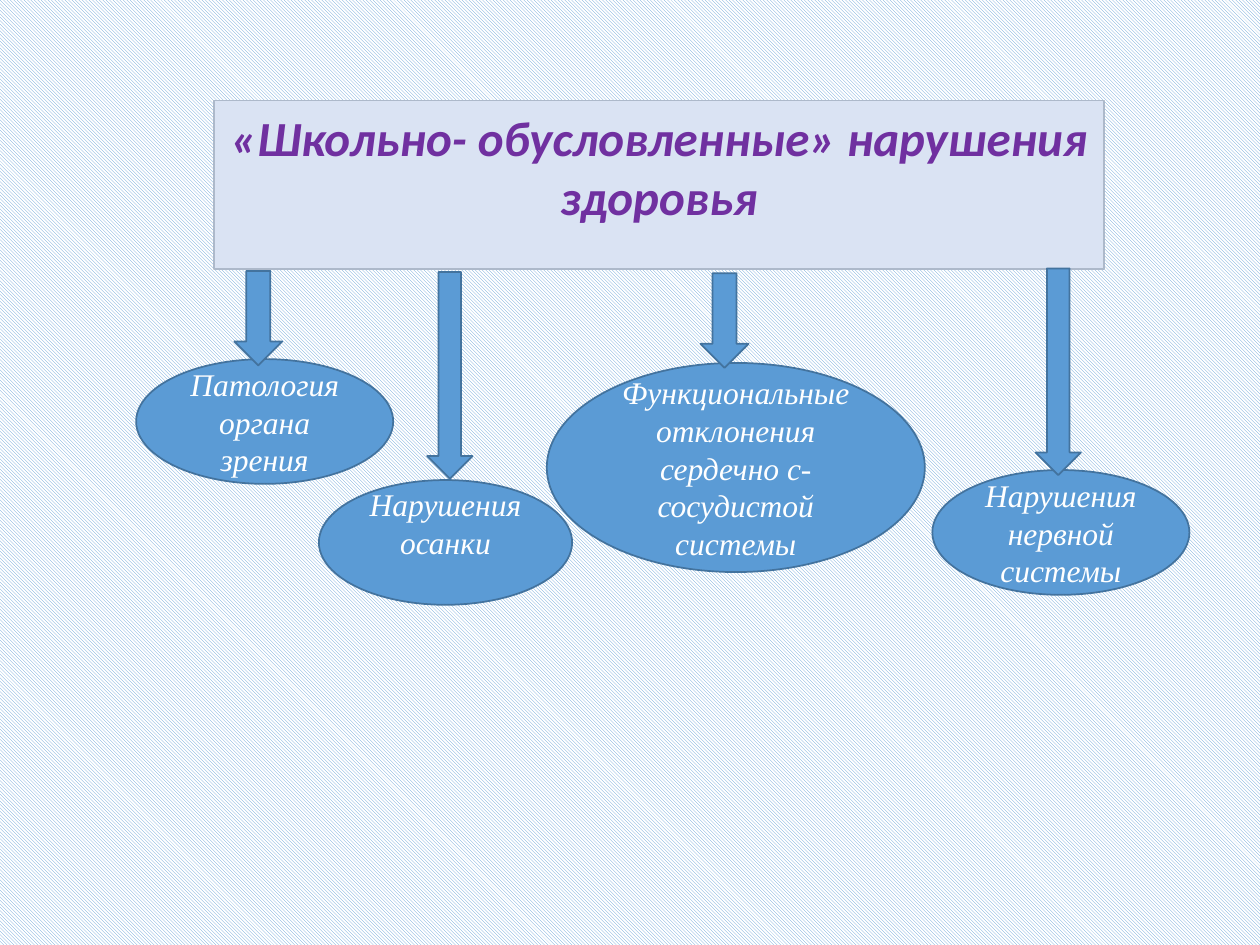
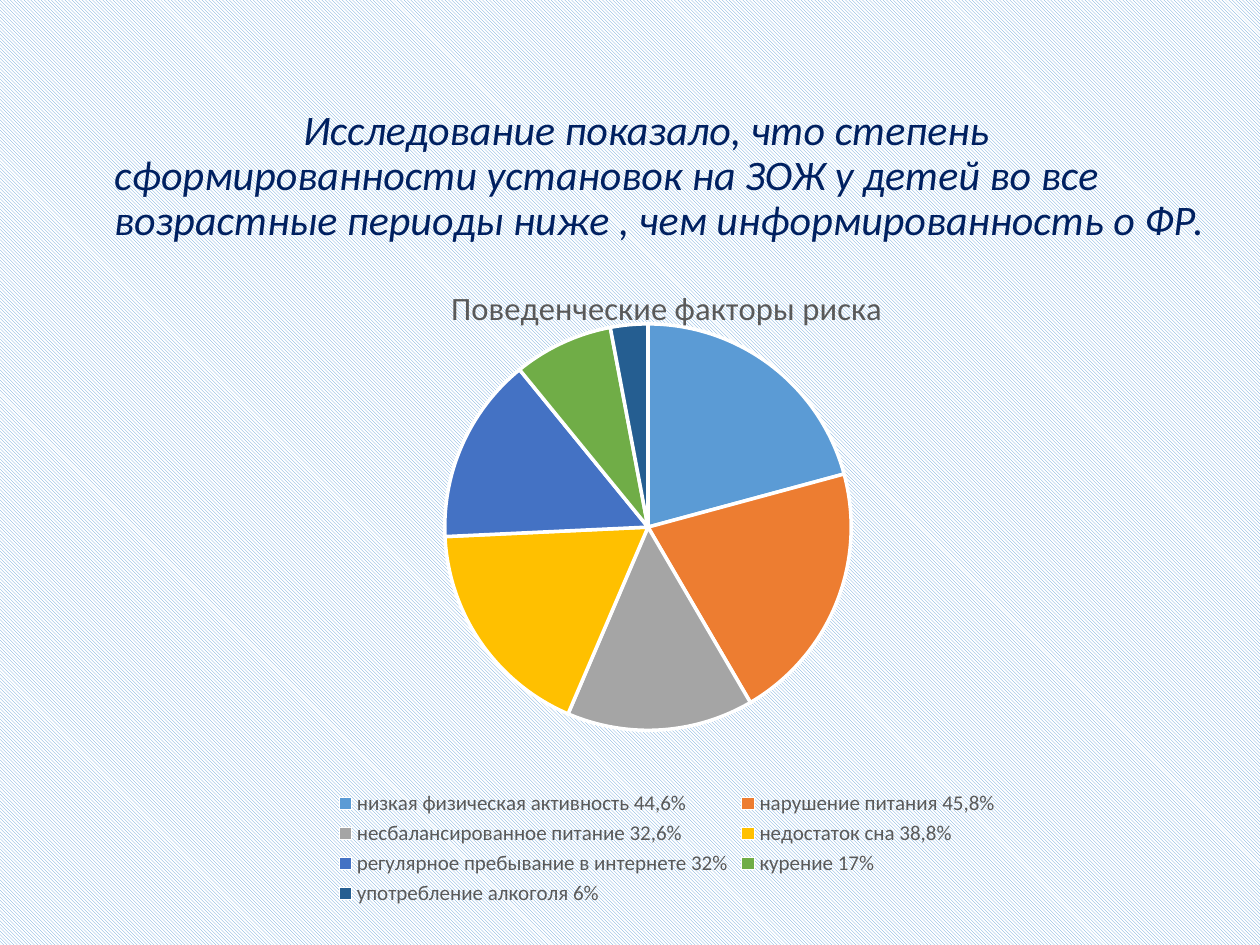
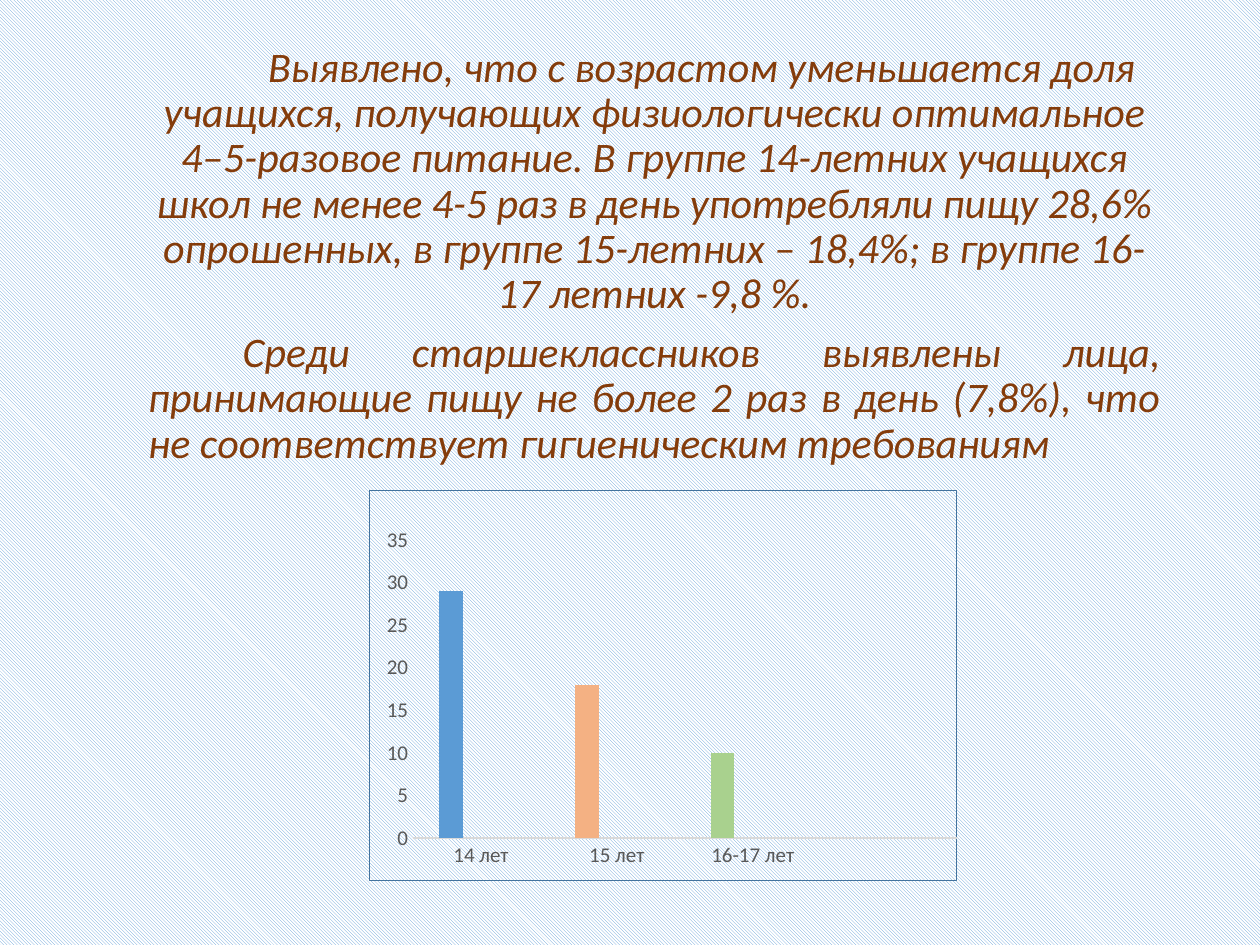
from lxml import etree
from pptx import Presentation
from pptx.chart.data import CategoryChartData
from pptx.dml.color import RGBColor
from pptx.enum.chart import XL_CHART_TYPE, XL_LEGEND_POSITION, XL_TICK_MARK
from pptx.enum.dml import MSO_PATTERN
from pptx.enum.shapes import MSO_SHAPE
from pptx.enum.text import MSO_ANCHOR, PP_ALIGN
from pptx.oxml import parse_xml
from pptx.oxml.ns import nsdecls, qn
from pptx.util import Pt

PIE, COLUMNS = XL_CHART_TYPE.PIE, XL_CHART_TYPE.COLUMN_CLUSTERED
BOTTOM = XL_LEGEND_POSITION.BOTTOM
NO_TICK = XL_TICK_MARK.NONE
DIAGONAL = MSO_PATTERN.DARK_DOWNWARD_DIAGONAL
RECT, OVAL, ARROW = MSO_SHAPE.RECTANGLE, MSO_SHAPE.OVAL, MSO_SHAPE.DOWN_ARROW
MIDDLE = MSO_ANCHOR.MIDDLE
LEFT, CENTER, JUSTIFY = PP_ALIGN.LEFT, PP_ALIGN.CENTER, PP_ALIGN.JUSTIFY

COLORS = {name: RGBColor.from_string(value) for name, value in {
    "blue": "5B9BD5", "outline": "43739E", "white": "FFFFFF",
    "pale": "DAE3F3", "pale_line": "ADB9CA", "purple": "7030A0",
    "navy": "002060", "brown": "843C0B", "gray": "595959", "axis": "D9D9D9",
    "orange": "ED7D31", "silver": "A5A5A5", "yellow": "FFC000",
    "royal": "4472C4", "green": "70AD47", "deep": "255E91",
    "peach": "F4B183", "light_green": "A9D18E", "black": "000000"}.items()}
HANGING = 13.5  # left margin of body text


def add_text(tf, text, size=18, font="Calibri", color="white", bold=False,
             align=CENTER, first_line=None, first=True):
    """Write one paragraph; first_line marks body text and its indent."""
    p = tf.paragraphs[0] if first else tf.add_paragraph()
    p.alignment = align
    if first_line is not None:
        pPr = p._p.get_or_add_pPr()
        pPr.set("marL", str(Pt(HANGING)))
        pPr.set("indent", str(Pt(first_line)))
        p.line_spacing = 0.9
        if not first:
            p.space_before = Pt(7.5)
    r = p.add_run()
    r.text = text
    r.font.size, r.font.name = Pt(size), font
    r.font.bold, r.font.italic = bold, True
    r.font.color.rgb = COLORS[color]


def add_chart(slide, kind, box, data, plot_box, border="<a:noFill/>"):
    """Place a transparent chart; plot_box is the inner plot area in points."""
    chart = slide.shapes.add_chart(kind, *map(Pt, box), data).chart
    chart.font.size, chart.font.name = Pt(10), "Calibri"
    chart.font.color.rgb = COLORS["black"]
    chart._chartSpace.find(qn("c:chart")).addnext(parse_xml(
        f'<c:spPr {nsdecls("c", "a")}><a:noFill/>'
        f'<a:ln w="{Pt(0.75)}">{border}</a:ln></c:spPr>'))
    plot_area = chart._chartSpace.find(".//" + qn("c:plotArea"))
    for old in plot_area.findall(qn("c:layout")):
        plot_area.remove(old)
    layout = etree.Element(qn("c:layout"))
    manual = etree.SubElement(layout, qn("c:manualLayout"))
    settings = [("layoutTarget", "inner"), ("xMode", "edge"), ("yMode", "edge")]
    shares = [length / whole for length, whole in zip(plot_box, box[2:] * 2)]
    for tag, value in settings + list(zip("xywh", shares)):
        etree.SubElement(manual, qn("c:" + tag)).set("val", str(value))
    plot_area.insert(0, layout)
    return chart


prs = Presentation()
prs.slide_width, prs.slide_height = Pt(720), Pt(540)
blank = prs.slide_layouts[6]

# Shared background
fill = prs.slide_master.background.fill
fill.patterned()
fill.pattern = DIAGONAL
fill.fore_color.rgb, fill.back_color.rgb = COLORS["blue"], COLORS["white"]

# Slide 1: health disorders, then the heading, then the arrows
slide = prs.slides.add_slide(blank)
disorder = {"font": "Times New Roman"}
heading = {"size": 28, "color": "purple", "bold": True}
blue, pale = ("blue", "outline"), ("pale", "pale_line")
# kind, box, colours, text, format, bottom inset
diagram = [
    (OVAL, (77.8, 205.2, 146.9, 71.3), blue, "Патология органа зрения", disorder, 3.6),
    (OVAL, (182.2, 274.3, 144.7, 71.3), blue, "Нарушения осанки", disorder, 25.5),
    (OVAL, (312.5, 207.4, 216, 119.5), blue,
     "Функциональные отклонения сердечно с-сосудистой системы", disorder, 3.6),
    (OVAL, (532.8, 268.6, 146.9, 71.3), blue, "Нарушения нервной системы", disorder, 3.6),
    (RECT, (122.4, 57.4, 508.3, 96.5), pale,
     "«Школьно- обусловленные» нарушения здоровья", heading, 24.5),
]
arrows = [(133.9, 154.8, 27.4, 54), (244.1, 155.5, 25.9, 118.1),
          (400.3, 156.2, 27.4, 54), (591.8, 153.4, 25.9, 118.1)]
diagram += [(ARROW, box, blue, "", {}, 3.6) for box in arrows]

for kind, box, (fill_color, line_color), text, style, inset in diagram:
    sp = slide.shapes.add_shape(kind, *map(Pt, box))
    sp.shadow.inherit = False
    sp.fill.solid()
    sp.fill.fore_color.rgb = COLORS[fill_color]
    sp.line.color.rgb, sp.line.width = COLORS[line_color], Pt(1)
    if text:
        tf = sp.text_frame
        tf.word_wrap, tf.vertical_anchor = True, MIDDLE
        tf.margin_bottom = Pt(inset)
        add_text(tf, text, **style)

# Slide 2: behavioural risk factors
slide = prs.slides.add_slide(blank)
tf = slide.shapes.add_textbox(Pt(44.6), Pt(58.7), Pt(656.6), Pt(120)).text_frame
tf.word_wrap = True
add_text(tf, "Исследование показало, что степень сформированности установок на ЗОЖ "
         "у детей во все возрастные периоды ниже , чем информированность о ФР.",
         size=24, color="navy", align=LEFT, first_line=108)

factors = [
    ("низкая физическая активность 44,6%", 21, "blue"),
    ("нарушение питания 45,8%", 21, "orange"),
    ("несбалансированное питание 32,6%", 15, "silver"),
    ("недостаток сна 38,8%", 18, "yellow"),
    ("регулярное пребывание в интернете 32%", 15, "royal"),
    ("курение 17%", 8, "green"),
    ("употребление алкоголя 6%", 3, "deep"),
]
title = "Поведенческие факторы риска"
data = CategoryChartData()
data.categories = [name for name, _, _ in factors]
data.add_series(title, [value for _, value, _ in factors])
chart = add_chart(slide, PIE, (115.9, 148.3, 530.6, 372.2), data,
                  (0, 36.8, 508.8, 232.3))
chart.has_title = True
p = chart.chart_title.text_frame.paragraphs[0]
r = p.add_run()
r.text = title
r.font.size, r.font.name, r.font.bold = Pt(18.6), "Calibri", False
r.font.color.rgb = COLORS["gray"]
chart.has_legend = True
chart.legend.position, chart.legend.include_in_layout = BOTTOM, False
chart.legend.font.size, chart.legend.font.name = Pt(12), "Calibri"
chart.legend.font.color.rgb = COLORS["gray"]
plot = chart.plots[0]
plot.vary_by_categories = True
for i, (_, _, color) in enumerate(factors):
    fmt = plot.series[0].points[i].format
    fmt.fill.solid()
    fmt.fill.fore_color.rgb = COLORS[color]
    fmt.line.color.rgb, fmt.line.width = COLORS["white"], Pt(2)

# Slide 3: meals per day by age
slide = prs.slides.add_slide(blank)
tf = slide.shapes.add_textbox(Pt(64.1), Pt(22.7), Pt(606.2), Pt(250)).text_frame
tf.word_wrap = True
body = {"size": 24, "color": "brown", "first_line": 54}
add_text(tf, "Выявлено, что с возрастом уменьшается доля учащихся, получающих "
         "физиологически оптимальное 4–5-разовое питание. В группе 14-летних "
         "учащихся школ не менее 4-5 раз в день употребляли пищу 28,6% опрошенных, "
         "в группе 15-летних – 18,4%; в группе 16-17 летних -9,8 %.", **body)
add_text(tf, "Среди старшеклассников выявлены лица, принимающие пищу не более "
         "2 раз в день (7,8%), что не соответствует гигиеническим требованиям",
         align=JUSTIFY, first=False, **body)

data = CategoryChartData()
data.categories = ["14 лет", "15 лет", "16-17 лет", ""]
data.add_series("Series 1", [29, 18, 10, None])
for name in ("Series 2", "Series 3"):
    data.add_series(name, [None] * 4)
border = f'<a:solidFill><a:srgbClr val="{COLORS["outline"]}"/></a:solidFill>'
chart = add_chart(slide, COLUMNS, (210.8, 279.8, 336.2, 223.9), data,
                  (29.6, 28.4, 311.3, 171), border)
chart.has_title = chart.has_legend = False
# The fourth category is an unnamed gap
for cat in chart._chartSpace.iter(qn("c:cat")):
    unnamed = cat.findall(".//" + qn("c:pt"))[-1]
    unnamed.getparent().remove(unnamed)
plot = chart.plots[0]
plot.vary_by_categories = False
plot.gap_width, plot.overlap = 219, -27
for series, color in zip(plot.series, ("blue", "orange", "silver")):
    series.format.fill.solid()
    series.format.fill.fore_color.rgb = COLORS[color]
for i, color in enumerate(("peach", "light_green"), start=1):
    fmt = plot.series[0].points[i].format
    fmt.fill.solid()
    fmt.fill.fore_color.rgb = COLORS[color]
for axis in (chart.category_axis, chart.value_axis):
    axis.major_tick_mark = axis.minor_tick_mark = NO_TICK
    axis.has_major_gridlines = False
    font = axis.tick_labels.font
    font.size, font.name = Pt(12), "Calibri"
    font.color.rgb = COLORS["gray"]
line = chart.category_axis.format.line
line.color.rgb, line.width = COLORS["axis"], Pt(0.75)
axis = chart.value_axis
axis.format.line.fill.background()
axis.minimum_scale, axis.maximum_scale, axis.major_unit = 0, 35, 5

prs.save("out.pptx")
